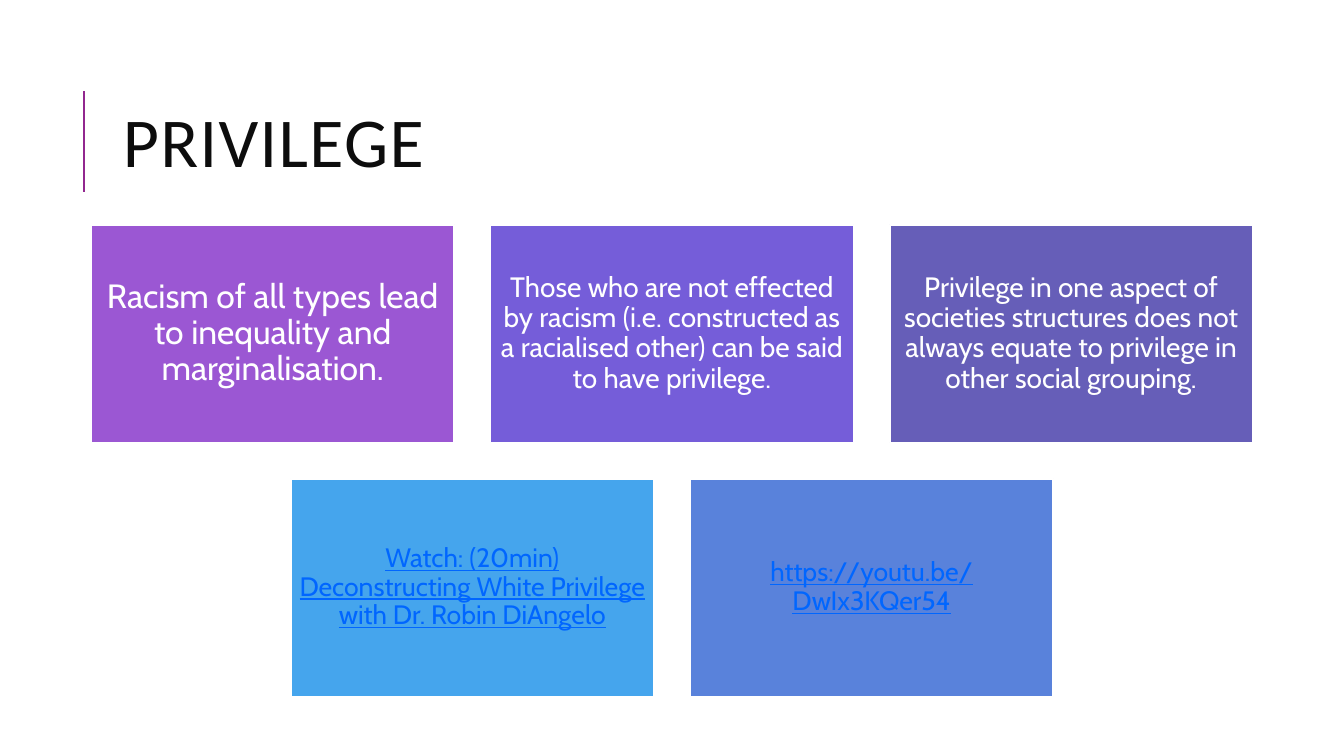
"""Build the slide on privilege: a title above five centred cards."""
from dataclasses import dataclass

from lxml.etree import SubElement
from pptx import Presentation
from pptx.dml.color import RGBColor
from pptx.enum.shapes import MSO_CONNECTOR, MSO_SHAPE
from pptx.enum.text import MSO_ANCHOR, PP_ALIGN
from pptx.oxml.ns import qn
from pptx.util import Inches, Pt

TITLE = "PRIVILEGE"
CARD_ROWS = [
    [
        ("Racism of all types lead to inequality and marginalisation.", "9B57D3", "large"),
        ("Those who are not effected by racism (i.e. constructed as a racialised other) "
         "can be said to have privilege.", "755DD9", "body"),
        ("Privilege in one aspect of societies structures does not always equate to "
         "privilege in other social grouping.", "665EB8", "body"),
    ],
    [
        ("Watch: (20min) Deconstructing White Privilege with Dr. Robin DiAngelo",
         "45A5ED", "link"),
        ("https://youtu.be/DwIx3KQer54", "5982DB", "link"),
    ],
]


@dataclass(frozen=True)
class Theme:
    title_font: str = "Calibri"
    card_font: str = "Cabin"
    ink: str = "0D0D0D"
    paper: str = "FFFFFF"
    link: str = "0066FF"
    accent: str = "92278F"
    title_size: int = 50
    large_size: int = 24
    body_size: int = 20
    link_size: int = 19


THEME = Theme()
STYLES = {
    "large": dict(size=THEME.large_size, color=THEME.paper),
    "body": dict(size=THEME.body_size, color=THEME.paper),
    "link": dict(size=THEME.link_size, color=THEME.link, underline=True),
}
WIDTH, HEIGHT = 13.33, 7.5
CARD_WIDTH, CARD_HEIGHT, GAP = 3.6, 2.16, 0.36
CARDS_TOP = 2.23
CARD_INSET = 0.08


def write(box, text, *, font, size, color, align=PP_ALIGN.LEFT, leading=0.9,
          underline=None, tracking=0, inset=None):
    frame = box.text_frame
    frame.word_wrap = True
    frame.vertical_anchor = MSO_ANCHOR.MIDDLE
    if inset is not None:
        frame.margin_left = frame.margin_right = Inches(inset)
        frame.margin_top = frame.margin_bottom = Inches(inset)
    para = frame.paragraphs[0]
    para.alignment = align
    para.line_spacing = leading
    span = para.add_run()
    span.text = text
    span.font.name = font
    span.font.size = Pt(size)
    span.font.color.rgb = RGBColor.from_string(color)
    span.font.underline = underline
    if tracking:
        span._r.get_or_add_rPr().set("spc", str(tracking * 100))


def add_title(page):
    rule = page.shapes.add_connector(
        MSO_CONNECTOR.STRAIGHT, Inches(0.83), Inches(1.9), Inches(0.83), Inches(0.9))
    rule.line.color.rgb = RGBColor.from_string(THEME.accent)
    rule.line.width = Pt(1.5)
    SubElement(rule._element.spPr, qn("a:effectLst"))
    box = page.shapes.add_textbox(Inches(1.12), Inches(0.64), Inches(10.63), Inches(1.64))
    write(box, TITLE, font=THEME.title_font, size=THEME.title_size, color=THEME.ink,
          leading=0.8, tracking=1)


def add_card(page, left, top, text, fill, style):
    card = page.shapes.add_shape(
        MSO_SHAPE.RECTANGLE, Inches(left), Inches(top), Inches(CARD_WIDTH), Inches(CARD_HEIGHT))
    card.shadow.inherit = False
    card.fill.solid()
    card.fill.fore_color.rgb = RGBColor.from_string(fill)
    card.line.color.rgb = RGBColor.from_string(THEME.paper)
    card.line.width = Pt(1.25)
    write(card, text, font=THEME.card_font, align=PP_ALIGN.CENTER, inset=CARD_INSET,
          **STYLES[style])


def main():
    deck = Presentation()
    deck.slide_width, deck.slide_height = Inches(WIDTH), Inches(HEIGHT)
    page = deck.slides.add_slide(deck.slide_layouts[6])
    add_title(page)
    for row, cards in enumerate(CARD_ROWS):
        row_width = len(cards) * (CARD_WIDTH + GAP) - GAP
        row_left = (WIDTH - row_width) / 2
        top = CARDS_TOP + row * (CARD_HEIGHT + GAP)
        for column, (text, fill, style) in enumerate(cards):
            add_card(page, row_left + column * (CARD_WIDTH + GAP), top, text, fill, style)
    deck.save("out.pptx")


if __name__ == "__main__":
    main()
